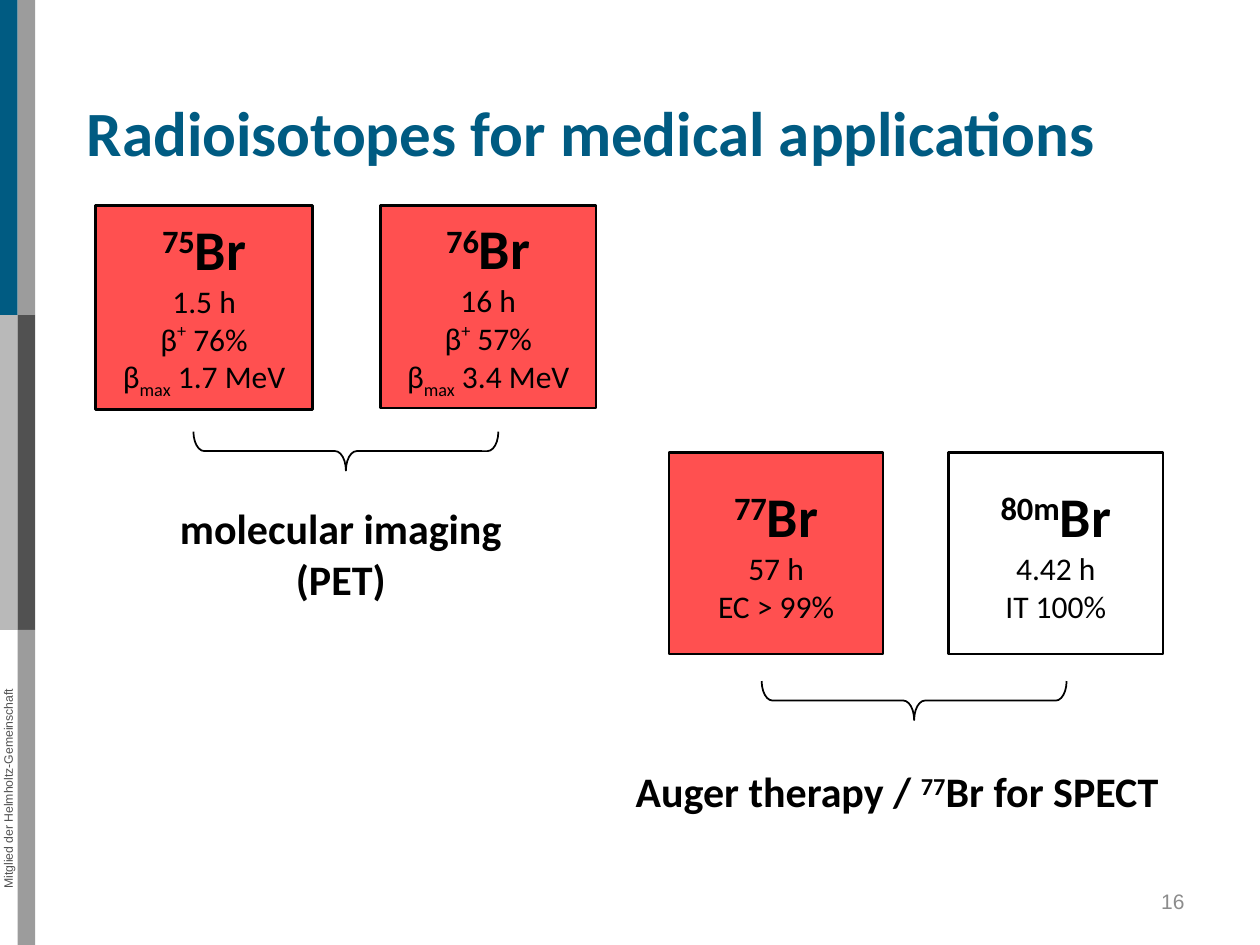
from dataclasses import dataclass
from pptx import Presentation
from pptx.dml.color import RGBColor
from pptx.enum.shapes import MSO_SHAPE
from pptx.enum.text import MSO_ANCHOR, MSO_AUTO_SIZE, PP_ALIGN
from pptx.util import Inches, Pt

RECTANGLE, BRACE = MSO_SHAPE.RECTANGLE, MSO_SHAPE.RIGHT_BRACE
TOP, MIDDLE = MSO_ANCHOR.TOP, MSO_ANCHOR.MIDDLE
LEFT, CENTER, RIGHT = PP_ALIGN.LEFT, PP_ALIGN.CENTER, PP_ALIGN.RIGHT
NO_FIT = MSO_AUTO_SIZE.NONE
COLUMNS, ROWS = 100, 75
SUPER, PLUS, SUB = 30, 42, -25


@dataclass(frozen=True)
class Theme:
    """Colours, fonts and type sizes of the page."""
    blue: str = "005B82"
    light: str = "B9B9B9"
    grey: str = "9C9C9C"
    dark: str = "515151"
    number: str = "8C8C8C"
    red: str = "FF5050"
    white: str = "FFFFFF"
    black: str = "000000"
    body: str = "Calibri"
    side: str = "Arial"
    title_size: int = 36
    symbol_size: int = 32
    label_size: int = 24
    detail_size: int = 18
    number_size: int = 12
    side_size: int = 7


class Page:
    """Draws themed elements on one slide, placed by grid columns and rows."""

    def __init__(self, deck, theme):
        self.theme = theme
        self.column = deck.slide_width / COLUMNS
        self.row = deck.slide_height / ROWS
        self.slide = deck.slides.add_slide(deck.slide_layouts[5])

    def area(self, left, top, width, height):
        """Turn grid units into slide lengths."""
        return (round(left * self.column), round(top * self.row),
                round(width * self.column), round(height * self.row))

    def fill_para(self, para, spans, size, color, bold=False, font=None, align=CENTER):
        """Fill a paragraph with (text, baseline percent) spans."""
        para.alignment = align
        para.font.name = font or self.theme.body
        para.font.size = Pt(size)
        para.font.bold = bold
        para.font.color.rgb = RGBColor.from_string(color)
        for text, baseline in spans:
            span = para.add_run()
            span.text = text
            if baseline:
                span._r.get_or_add_rPr().set("baseline", str(baseline * 1000))

    def title(self, text, *area):
        """Move and format the title placeholder."""
        box = self.slide.shapes.title
        box.left, box.top, box.width, box.height = self.area(*area)
        frame = box.text_frame
        frame.vertical_anchor, frame.auto_size = TOP, NO_FIT
        self.fill_para(frame.paragraphs[0], [(text, 0)], self.theme.title_size,
                       self.theme.blue, True, align=LEFT)

    def shape(self, kind, area, fill=None, line=None, weight=1):
        """Add a preset shape without shadow."""
        shape = self.slide.shapes.add_shape(kind, *self.area(*area))
        shape.shadow.inherit = False
        if fill:
            shape.fill.solid()
            shape.fill.fore_color.rgb = RGBColor.from_string(fill)
        else:
            shape.fill.background()
        if line:
            shape.line.color.rgb = RGBColor.from_string(line)
            shape.line.width = Pt(weight)
        else:
            shape.line.fill.background()
        return shape

    def text(self, lines, area, size, color, anchor=TOP, margin=None, rotation=0, **style):
        """Add a text box with one paragraph for each line."""
        box = self.slide.shapes.add_textbox(*self.area(*area))
        box.rotation = rotation
        frame = box.text_frame
        frame.word_wrap, frame.vertical_anchor = True, anchor
        if margin is not None:
            frame.margin_left = frame.margin_right = margin
            frame.margin_top = frame.margin_bottom = margin
        for index, spans in enumerate(lines):
            para = frame.add_paragraph() if index else frame.paragraphs[0]
            self.fill_para(para, spans, size, color, **style)

    def isotope(self, mass, details, area, fill):
        """Add a nuclide card with its symbol and decay data."""
        theme = self.theme
        frame = self.shape(RECTANGLE, area, fill, theme.black, 1.5).text_frame
        frame.word_wrap, frame.vertical_anchor = True, MIDDLE
        self.fill_para(frame.paragraphs[0], [(mass, SUPER), ("Br", 0)],
                       theme.symbol_size, theme.black, True)
        for spans in details:
            self.fill_para(frame.add_paragraph(), spans, theme.detail_size, theme.black)

    def brace(self, center, middle):
        """Add a downward brace around its centre point."""
        width, height = 3.1, 24.2
        area = (center - width / 2, middle - height / 2, width, height)
        brace = self.shape(BRACE, area, line=self.theme.black)
        brace.rotation = 90
        brace.adjustments[0] = 0.277


def positron(half_life, share, energy):
    """Return the decay lines of a positron emitter."""
    return [[(half_life, 0)],
            [("β", 0), ("+", PLUS), (f" {share}", 0)],
            [("β", 0), ("max", SUB), (f" {energy}", 0)]]


def main():
    """Build and save the slide."""
    deck = Presentation()
    deck.slide_width, deck.slide_height = Inches(10), Inches(7.5)
    theme = Theme()
    page = Page(deck, theme)

    band, third = 1.4, ROWS / 3
    for column, row, color in ((0, 1, theme.light), (1, 1, theme.dark), (0, 0, theme.blue),
                               (1, 0, theme.grey), (1, 2, theme.grey)):
        page.shape(RECTANGLE, (column * band, row * third, band, third), color)
    page.text([[("Mitglied der Helmholtz-Gemeinschaft", 0)]], (-11.8, 62, 24.9, 1.2),
              theme.side_size, theme.dark, margin=0, rotation=270, font=theme.side)
    page.text([[("16", 0)]], (71.7, 69.5, 23.3, 4), theme.number_size, theme.number,
              anchor=MIDDLE, font=theme.side, align=RIGHT)
    page.title("Radioisotopes for medical applications", 5.9, 6.9, 85, 7.8)

    page.brace(27.45, 35.8)
    page.brace(72.55, 55.6)
    page.text([[("molecular imaging", 0)], [("(PET)", 0)]], (10.7, 39.4, 32.7, 9.1),
              theme.label_size, theme.black, bold=True)
    page.text([[("Auger therapy / ", 0), ("77", SUPER), ("Br for SPECT", 0)]],
              (45.5, 60.3, 51.4, 5), theme.label_size, theme.black, bold=True)

    page.isotope("75", positron("1.5 h", "76%", "1.7 MeV"), (7.6, 16.3, 17.2, 16.2), theme.red)
    page.isotope("76", positron("16 h", "57%", "3.4 MeV"), (30.2, 16.3, 17.1, 16.1), theme.red)
    page.isotope("77", [[("57 h", 0)], [("EC > 99%", 0)]], (53.1, 35.9, 17, 16), theme.red)
    page.isotope("80m", [[("4.42 h", 0)], [("IT 100%", 0)]], (75.3, 35.9, 17, 16), theme.white)
    deck.save("out.pptx")


if __name__ == "__main__":
    main()
